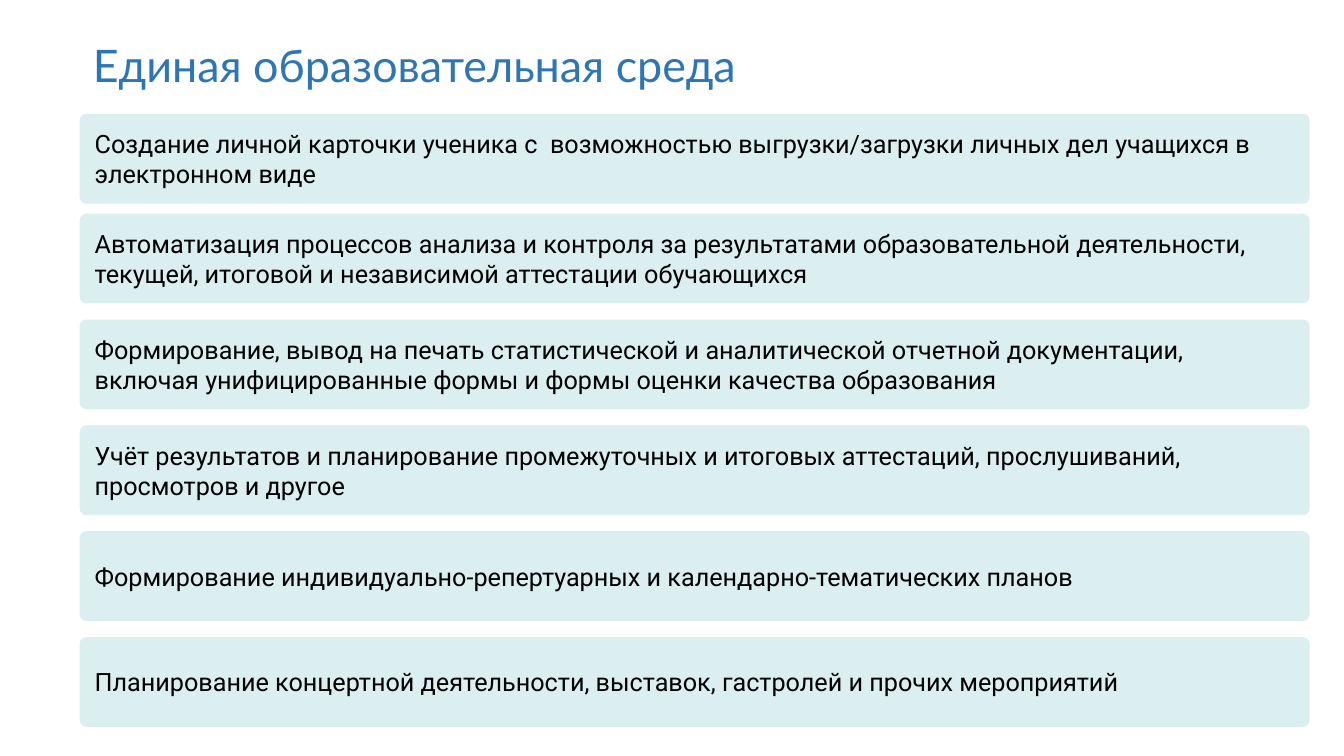
from pptx import Presentation
from pptx.dml.color import RGBColor
from pptx.enum.shapes import MSO_SHAPE
from pptx.enum.text import MSO_ANCHOR, MSO_AUTO_SIZE, PP_ALIGN
from pptx.util import Inches, Pt

LEFT = 0.79
FIRST_TOP = 1.13
SECOND_TOP = 2.12
STEP = 1.05
FEATURES = [
    "Создание личной карточки ученика с  возможностью выгрузки/загрузки личных дел учащихся в электронном виде",
    "Автоматизация процессов анализа и контроля за результатами образовательной деятельности, текущей, итоговой и независимой аттестации обучающихся",
    "Формирование, вывод на печать статистической и аналитической отчетной документации, включая унифицированные формы и формы оценки качества образования",
    "Учёт результатов и планирование промежуточных и итоговых аттестаций, прослушиваний, просмотров и другое",
    "Формирование индивидуально-репертуарных и календарно-тематических планов",
    "Планирование концертной деятельности, выставок, гастролей и прочих мероприятий",
]


def color(value):
    return RGBColor.from_string(value)


def write_text(shape, text, font_name, size, text_color, anchor):
    frame = shape.text_frame
    frame.text = text
    frame.word_wrap = True
    frame.auto_size = MSO_AUTO_SIZE.NONE
    frame.vertical_anchor = anchor
    frame.margin_left = frame.margin_right = Inches(0.13)
    frame.margin_top = frame.margin_bottom = Inches(0.07)
    paragraph = frame.paragraphs[0]
    paragraph.alignment = PP_ALIGN.LEFT
    font = paragraph.runs[0].font
    font.name = font_name
    font.size = Pt(size)
    font.color.rgb = color(text_color)


def place_heading(slide, left, top, width, height):
    heading = slide.shapes.title
    heading.left, heading.top = Inches(left), Inches(top)
    heading.width, heading.height = Inches(width), Inches(height)
    write_text(heading, "Единая образовательная среда", "Lato", 32, "2E75B6", MSO_ANCHOR.TOP)


def add_feature(slide, text, left, top, width, height):
    feature = slide.shapes.add_shape(
        MSO_SHAPE.ROUNDED_RECTANGLE,
        Inches(left), Inches(top), Inches(width), Inches(height),
    )
    feature.adjustments[0] = 0.075
    feature.shadow.inherit = False
    feature.fill.solid()
    feature.fill.fore_color.rgb = color("DBEFF1")
    feature.line.fill.background()
    write_text(feature, text, "Roboto", 18, "000000", MSO_ANCHOR.MIDDLE)


def main():
    presentation = Presentation()
    presentation.slide_width = Inches(13.33)
    presentation.slide_height = Inches(7.5)
    slide = presentation.slides.add_slide(presentation.slide_layouts[5])
    place_heading(slide, LEFT, 0.3, 10.01, 0.67)
    tops = [FIRST_TOP] + [SECOND_TOP + STEP * row for row in range(len(FEATURES) - 1)]
    for text, top in zip(FEATURES, tops):
        add_feature(slide, text, LEFT, top, 12.2, 0.89)
    presentation.save("out.pptx")


if __name__ == "__main__":
    main()
